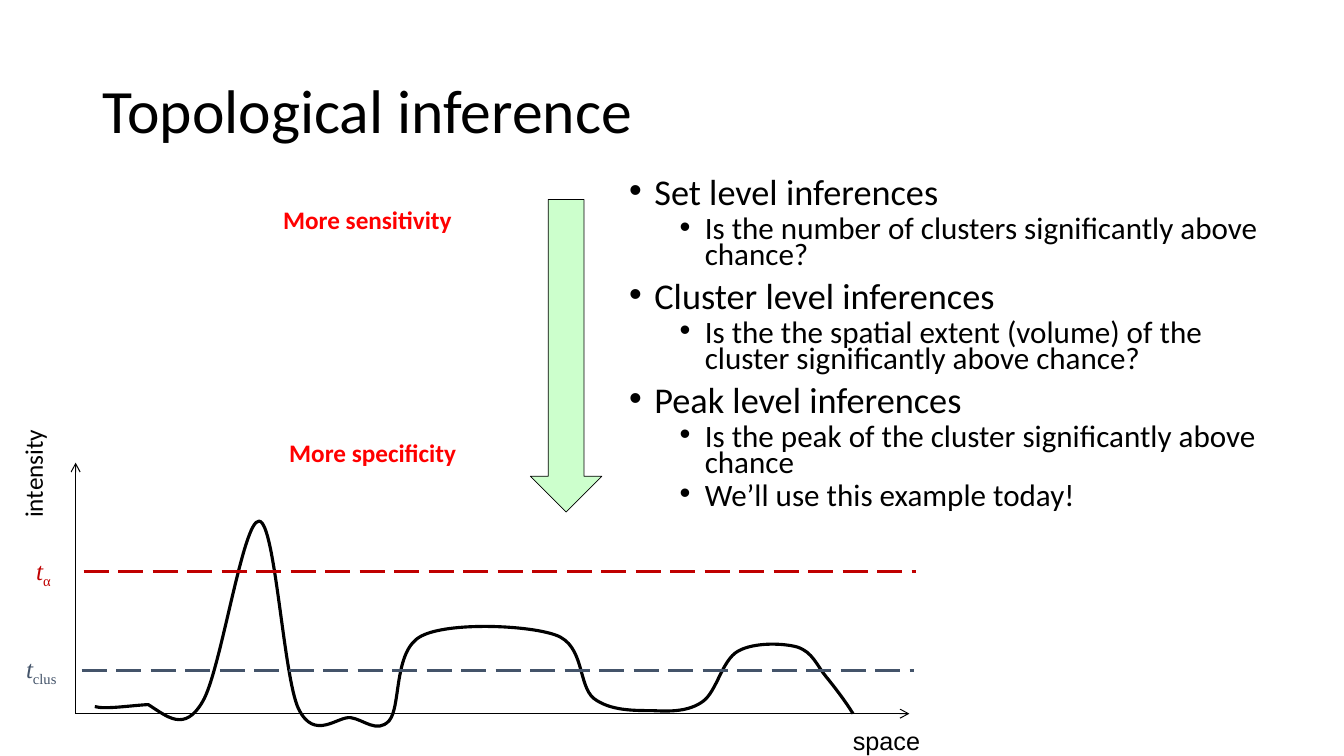
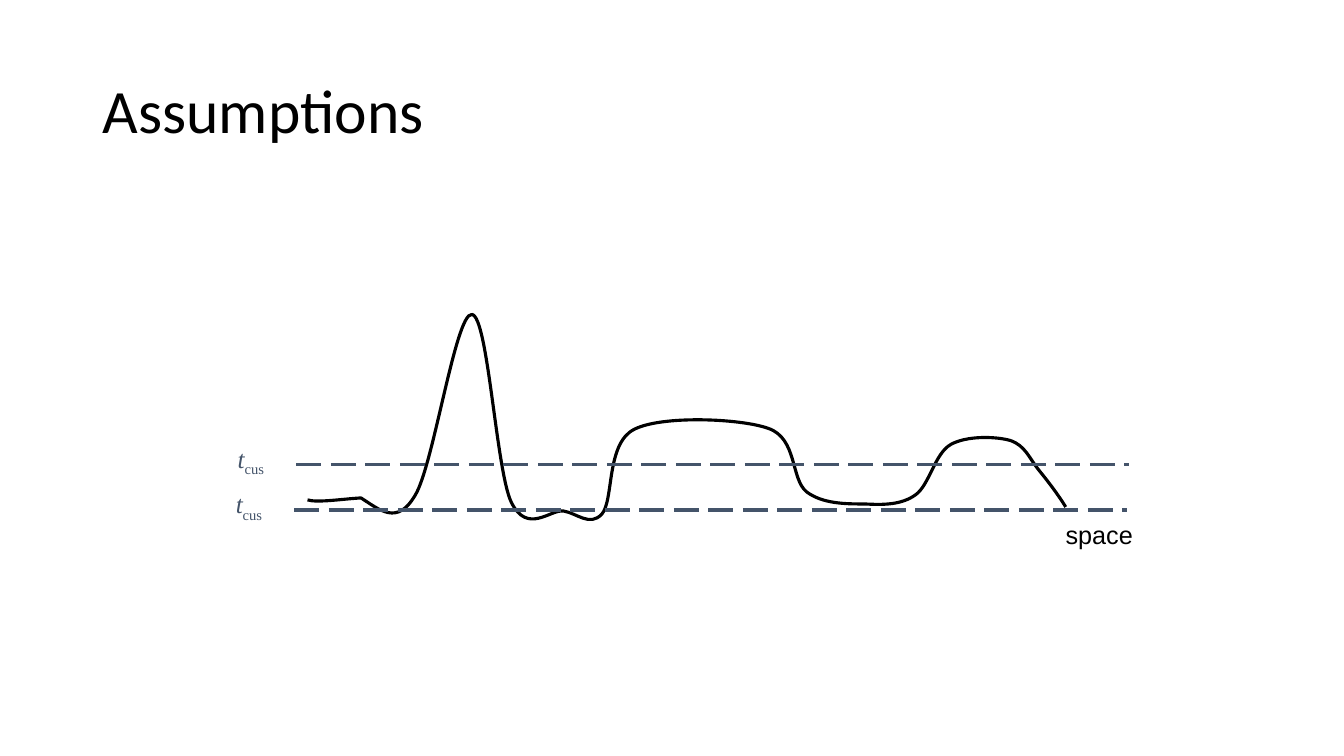
import pptx
import pptx.util
import pptx.dml.color
import pptx.enum.dml
import pptx.enum.shapes
import pptx.enum.text
import pptx.oxml.ns
import lxml.etree

Inches = pptx.util.Inches
Pt = pptx.util.Pt
qn = pptx.oxml.ns.qn
MID = pptx.enum.text.MSO_ANCHOR.MIDDLE
TOP = pptx.enum.text.MSO_ANCHOR.TOP
LEFT = pptx.enum.text.PP_ALIGN.LEFT
FIT = pptx.enum.text.MSO_AUTO_SIZE

INK = {"black": "000000", "alpha": "C00000", "slate": "44546A",
       "note": "FF0000", "arrow": "CCFFCC"}
SANS, SERIF, ARIAL = "Calibri", "Times New Roman", "Arial"

# Signal curve: start, then two handles and an end for each Bézier piece
START = (0, 1.84)
BENDS = [
    (0.10, 1.87, 0.35, 1.83, 0.53, 1.82),
    (0.72, 1.94, 0.89, 2.10, 1.07, 1.79),
    (1.25, 1.49, 1.47, -0.02, 1.63, 0),
    (1.79, 0.01, 1.87, 1.54, 2.02, 1.86),
    (2.18, 2.19, 2.41, 1.93, 2.54, 1.95),
    (2.67, 1.97, 2.80, 2.11, 2.92, 1.98),
    (3.04, 1.84, 2.96, 1.28, 3.24, 1.14),
    (3.51, 1.00, 4.29, 1.03, 4.57, 1.13),
    (4.86, 1.23, 4.79, 1.63, 4.95, 1.76),
    (5.11, 1.88, 5.34, 1.88, 5.53, 1.88),
    (5.71, 1.89, 5.89, 1.89, 6.03, 1.79),
    (6.17, 1.69, 6.22, 1.38, 6.38, 1.29),
    (6.54, 1.20, 6.83, 1.21, 6.97, 1.25),
    (7.12, 1.30, 7.16, 1.43, 7.25, 1.54),
    (7.34, 1.65, 7.44, 1.78, 7.52, 1.91),
]
DEPTH = 2.04

LEVELS = [
    ("Set level inferences",
     ["Is the number of clusters significantly above chance?"]),
    ("Cluster level inferences",
     ["Is the the spatial extent (volume) of the cluster significantly "
      "above chance?"]),
    ("Peak level inferences",
     ["Is the peak of the cluster significantly above chance",
      "We’ll use this example today!"]),
]


def rgb(name):
    return pptx.dml.color.RGBColor.from_string(INK[name])


def write(para, text, size=18, font=SANS, ink="black", bold=False,
          slant=False, base=0):
    """Add one formatted run to a paragraph."""
    run = para.add_run()
    run.text = text
    run.font.size = Pt(size)
    run.font.name = font
    run.font.bold = bold
    run.font.italic = slant
    run.font.color.rgb = rgb(ink)
    if base:
        run.font._element.set("baseline", str(base * 1000))


def place(shape, x, y, w, h):
    shape.left, shape.top = Inches(x), Inches(y)
    shape.width, shape.height = Inches(w), Inches(h)


def label(slide, x, y, w, text, sub="", wrap=False, turn=0, **style):
    """Add a one-line text box, with an optional subscript."""
    box = slide.shapes.add_textbox(
        Inches(x), Inches(y), Inches(w), Inches(0.4))
    box.rotation = turn
    frame = box.text_frame
    frame.word_wrap = wrap
    frame.auto_size = FIT.SHAPE_TO_FIT_TEXT
    para = frame.paragraphs[0]
    write(para, text, **style)
    if sub:
        write(para, sub, **{**style, "slant": False, "base": -25})


def rule(slide, x1, y1, x2, y2, ink="black", width=0.75, dash=False,
         head=False):
    line = slide.shapes.add_connector(
        pptx.enum.shapes.MSO_CONNECTOR.STRAIGHT,
        Inches(x1), Inches(y1), Inches(x2), Inches(y2))
    line.line.color.rgb = rgb(ink)
    line.line.width = Pt(width)
    if dash:
        line.line.dash_style = pptx.enum.dml.MSO_LINE.LONG_DASH
    if head:
        lxml.etree.SubElement(
            line.line._get_or_add_ln(), qn("a:tailEnd"), type="arrow")
    lxml.etree.SubElement(line._element.spPr, qn("a:effectLst"))


def bend(curve):
    """Turn the straight pieces of the signal into Bézier pieces."""
    route = next(curve._element.iter(qn("a:path")))
    route.set("h", str(Inches(DEPTH)))
    curve.height = Inches(DEPTH)
    for piece, knots in zip(list(route.iter(qn("a:lnTo"))), BENDS):
        cubic = lxml.etree.Element(qn("a:cubicBezTo"))
        for dx, dy in zip(knots[::2], knots[1::2]):
            lxml.etree.SubElement(cubic, qn("a:pt"), x=str(Inches(dx)),
                                  y=str(Inches(dy)))
        route.replace(piece, cubic)


def signal(slide, x, y):
    """Draw the curve and its space label from the curve's top left."""
    pen = slide.shapes.build_freeform(
        Inches(x + START[0]), Inches(y + START[1]))
    pen.add_line_segments(
        [(Inches(x + knots[4]), Inches(y + knots[5])) for knots in BENDS],
        close=False)
    curve = pen.convert_to_shape()
    bend(curve)
    curve.shadow.inherit = False
    curve.fill.background()
    curve.line.color.rgb = rgb("black")
    curve.line.width = Pt(2.25)
    label(slide, x + 7.42, y + 1.98, 0.88, "space", font=ARIAL)


def axes(slide, x, y):
    """Draw both axes from their shared corner."""
    rule(slide, x, y, x + 8.27, y, head=True)
    rule(slide, x, y, x, y - 2.49, head=True)
    label(slide, x - 0.97, y - 2.59, 1.09, "intensity", turn=270)


def level(slide, x, y, sub, ink="slate", gap=0.68, lift=0.26, w=0.53):
    """Draw a dashed threshold with its t label to the left."""
    rule(slide, x, y, x + 8.26, y, ink=ink, width=2.25, dash=True)
    label(slide, x - gap, y - lift, w, "t", sub,
          font=SERIF, ink=ink, slant=True)


def scale(slide, x, y):
    """Draw the arrow from sensitivity to specificity."""
    arrow = slide.shapes.add_shape(
        pptx.enum.shapes.MSO_SHAPE.DOWN_ARROW,
        Inches(x + 2.55), Inches(y), Inches(0.71), Inches(3.1))
    arrow.shadow.inherit = False
    arrow.fill.solid()
    arrow.fill.fore_color.rgb = rgb("arrow")
    arrow.line.color.rgb = rgb("black")
    arrow.line.width = Pt(0.5)
    for dx, dy, word in ((0.06, 2.31, "specificity"), (0, 0, "sensitivity")):
        label(slide, x + dx, y + dy, 2.55, "More " + word, wrap=True,
              ink="note", bold=True)


def point(para, text, deep):
    """Format one bullet of the list."""
    para.level = int(deep)
    para.alignment = LEFT
    para.line_spacing = 0.7
    para.space_before = Pt(5 if deep else 10)
    props = para._p.get_or_add_pPr()
    props.set("marL", str(Inches(0.75 if deep else 0.25)))
    props.set("indent", str(Inches(-0.25)))
    lxml.etree.SubElement(props, qn("a:buFont"), typeface=ARIAL)
    lxml.etree.SubElement(props, qn("a:buChar"), char="•")
    write(para, text, size=22.2 if deep else 25.9)


def points(slide, x, y, w, h):
    body = slide.placeholders[1]
    place(body, x, y, w, h)
    frame = body.text_frame
    frame.auto_size = FIT.NONE
    frame.vertical_anchor = TOP
    rows = [row for top, subs in LEVELS
            for row in [(top, False)] + [(sub, True) for sub in subs]]
    for i, (text, deep) in enumerate(rows):
        para = frame.add_paragraph() if i else frame.paragraphs[0]
        point(para, text, deep)


def start(deck, layout, text):
    """Add a slide with the shared title style."""
    slide = deck.slides.add_slide(deck.slide_layouts[layout])
    title = slide.shapes.title
    place(title, 0.92, 0.4, 11.5, 1.45)
    frame = title.text_frame
    frame.auto_size = FIT.NONE
    frame.vertical_anchor = MID
    para = frame.paragraphs[0]
    para.alignment = LEFT
    para.line_spacing = 0.9
    write(para, text, size=44)
    return slide


def topology(deck):
    slide = start(deck, 1, "Topological inference")
    points(slide, 6.14, 1.75, 6.52, 3.71)
    signal(slide, 0.94, 5.17)
    axes(slide, 0.75, 7.08)
    level(slide, 0.83, 5.67, "α", ink="alpha", gap=0.57, lift=0.21, w=0.41)
    level(slide, 0.81, 6.65, "clus", gap=0.65, lift=0.22, w=0.57)
    scale(slide, 2.71, 1.98)


def premises(deck):
    slide = start(deck, 5, "Assumptions")
    signal(slide, 3.05, 3.12)
    for x, y in ((2.92, 5.06), (2.94, 4.61)):
        level(slide, x, y, "cus")


def main():
    deck = pptx.Presentation()
    deck.slide_width, deck.slide_height = Inches(13.33), Inches(7.5)
    topology(deck)
    premises(deck)
    deck.save("out.pptx")


if __name__ == "__main__":
    main()
